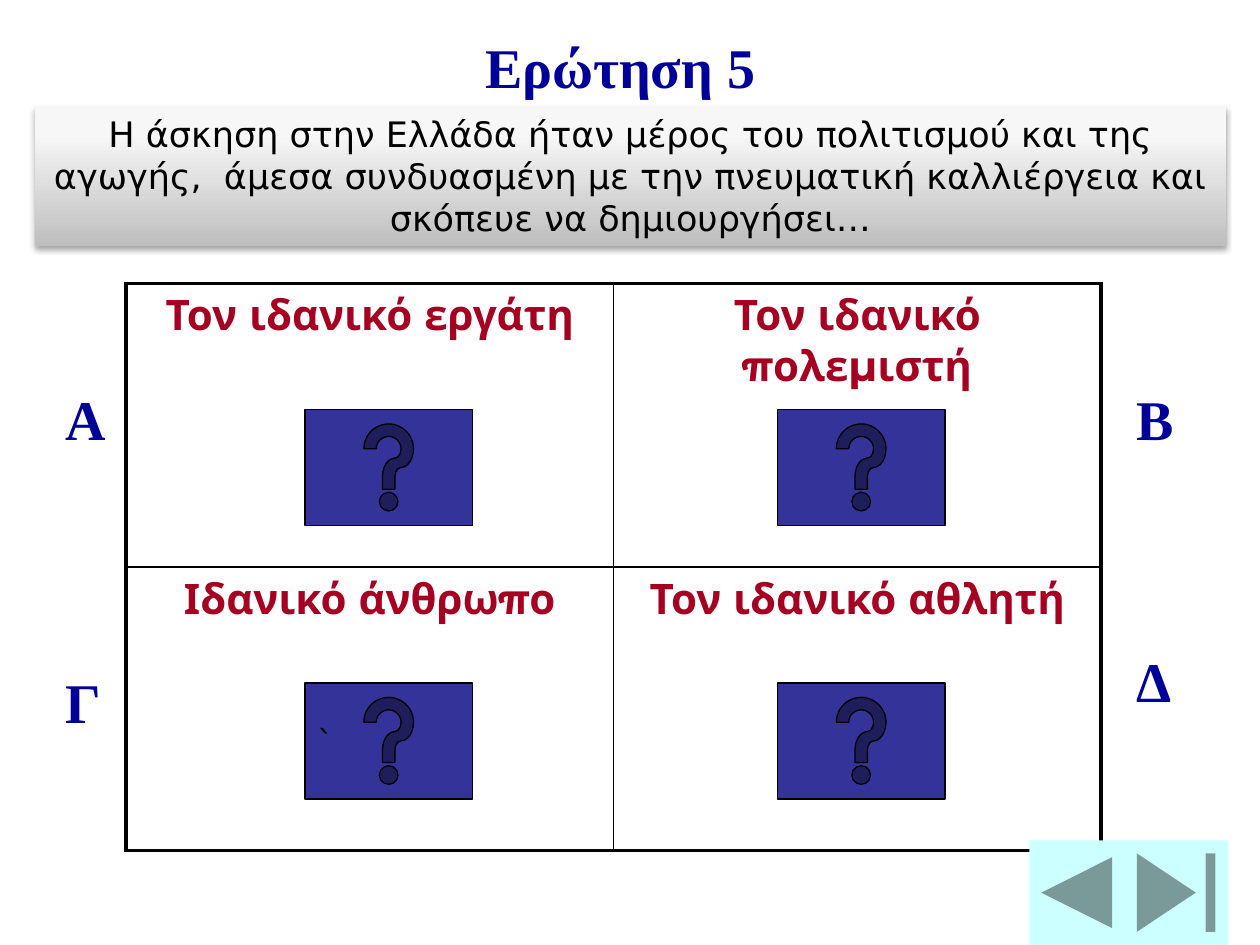
from dataclasses import dataclass
from typing import Any

from lxml import etree
from pptx import Presentation
from pptx import util as u
from pptx.dml.color import RGBColor
from pptx.enum import shapes, text
from pptx.oxml import ns

In = u.Inches
Button = shapes.MSO_SHAPE


def color(value):
    return RGBColor.from_string(value)


def child(parent, tag, **attributes):
    return etree.SubElement(parent, ns.qn(tag), {k: str(v) for k, v in attributes.items()})


@dataclass
class QuizSlide:
    slide: Any
    navy: str = "000099"
    red: str = "A50021"
    black: str = "000000"
    heading_font: str = "Times New Roman"
    answer_font: str = "Montserrat"
    body_font: str = "DejaVu Sans"

    def add_words(self, frame, words, size, font, ink, bold=False, align=text.PP_ALIGN.LEFT):
        paragraph = frame.paragraphs[0]
        paragraph.alignment = align
        paragraph.space_before = u.Pt(0)
        run = paragraph.add_run()
        run.text = words
        run.font.size = u.Pt(size)
        run.font.name = font
        run.font.bold = bold
        run.font.color.rgb = color(ink)

    def heading(self, frame, words):
        frame.word_wrap = True
        frame.vertical_anchor = text.MSO_ANCHOR.TOP
        frame.auto_size = text.MSO_AUTO_SIZE.SHAPE_TO_FIT_TEXT
        self.add_words(frame, words, 32, self.heading_font, self.navy, bold=True)

    def title(self, words, left, top, width, height):
        title = self.slide.shapes.title
        title.left, title.top = In(left), In(top)
        title.width, title.height = In(width), In(height)
        self.heading(title.text_frame, words)

    def letter(self, words, left, top):
        label = self.slide.shapes.add_textbox(In(left), In(top), In(0.5), In(0.63))
        self.heading(label.text_frame, words)

    def borders(self, cell, widths):
        properties = cell._tc.get_or_add_tcPr()
        for side, width in zip("LRTB", widths):
            line = child(properties, f"a:ln{side}", w=u.Pt(width))
            child(child(line, "a:solidFill"), "a:srgbClr", val=self.black)

    def answers(self, rows, left, top, width, height):
        table = self.slide.shapes.add_table(
            len(rows), len(rows[0]), In(left), In(top), In(width), In(height)).table
        outer, inner = 2.25, 1
        last_row, last_column = len(rows) - 1, len(rows[0]) - 1
        for r, row in enumerate(rows):
            table.rows[r].height = In(height / len(rows))
            for c, answer in enumerate(row):
                table.columns[c].width = In(width / len(row))
                cell = table.cell(r, c)
                edges = (c == 0, c == last_column, r == 0, r == last_row)
                self.borders(cell, [outer if edge else inner for edge in edges])
                cell.fill.solid()
                cell.fill.fore_color.rgb = color("FFFFFF")
                self.add_words(cell.text_frame, answer, 24, self.answer_font, self.red,
                               bold=True, align=text.PP_ALIGN.CENTER)

    def button(self, preset, left, top, width, height, fill, outlined=False):
        button = self.slide.shapes.add_shape(preset, In(left), In(top), In(width), In(height))
        button.shadow.inherit = False
        button.fill.solid()
        button.fill.fore_color.rgb = color(fill)
        if outlined:
            button.line.color.rgb = color(self.black)
            button.line.width = u.Pt(0.75)
        else:
            button.line.fill.background()
        return button

    def question(self, words, left, top, width, height):
        panel = self.slide.shapes.add_shape(
            Button.RECTANGLE, In(left), In(top), In(width), In(height))
        panel.line.fill.background()
        panel.fill.gradient()
        panel.fill.gradient_angle = 90
        properties = panel._element.spPr
        stops = properties.find(".//" + ns.qn("a:gsLst"))
        stops.clear()
        for percent, shade in ((0, "BEBEBE"), (80, "F7F7F7"), (100, "F8F8F8")):
            child(child(stops, "a:gs", pos=percent * 1000), "a:srgbClr", val=shade)
        panel.shadow.inherit = False
        shadow = child(properties.find(ns.qn("a:effectLst")), "a:outerShdw",
                       blurRad=u.Pt(3.1), dist=u.Pt(1.8), dir=90 * 60000, rotWithShape=0)
        child(child(shadow, "a:srgbClr", val=self.black), "a:alpha", val=35000)
        frame = panel.text_frame
        frame.word_wrap = True
        frame.vertical_anchor = text.MSO_ANCHOR.TOP
        frame.auto_size = text.MSO_AUTO_SIZE.SHAPE_TO_FIT_TEXT
        self.add_words(frame, words, 20, self.body_font, self.black,
                       align=text.PP_ALIGN.CENTER)


def main():
    deck = Presentation()
    deck.slide_width, deck.slide_height = In(10), In(7.5)
    quiz = QuizSlide(deck.slides.add_slide(deck.slide_layouts[5]))

    quiz.title("Ερώτηση 5", 3.75, 0.21, 2.67, 0.63)
    quiz.answers([["Τον ιδανικό εργάτη", "Τον ιδανικό πολεμιστή"],
                  ["Ιδανικό άνθρωπο", "Τον ιδανικό αθλητή"]], 1, 2.25, 7.74, 4.5)
    for letter, left, top in (("Α", 0.42, 3), ("Γ", 0.42, 5.25),
                              ("Β", 8.92, 3), ("Δ", 8.92, 5.08)):
        quiz.letter(letter, left, top)

    help_buttons = [quiz.button(Button.ACTION_BUTTON_HELP, left, top, 1.33, 0.92, "333399", True)
                    for left, top in ((2.42, 5.42), (6.17, 5.42), (6.17, 3.25), (2.42, 3.25))]
    mark = help_buttons[0].text_frame
    mark.word_wrap = False
    mark.vertical_anchor = text.MSO_ANCHOR.MIDDLE
    quiz.add_words(mark, "`", 18, quiz.body_font, quiz.black)

    quiz.button(Button.ACTION_BUTTON_END, 8.92, 6.67, 0.83, 0.83, "CCFFFF")
    quiz.button(Button.ACTION_BUTTON_BACK_OR_PREVIOUS, 8.17, 6.67, 0.75, 0.83, "CCFFFF")
    quiz.question("Η άσκηση στην Ελλάδα ήταν μέρος του πολιτισμού και της αγωγής,  "
                  "άμεσα συνδυασμένη με την πνευματική καλλιέργεια και σκόπευε να "
                  "δημιουργήσει…", 0.28, 0.84, 9.45, 1.11)
    deck.save("out.pptx")


if __name__ == "__main__":
    main()
